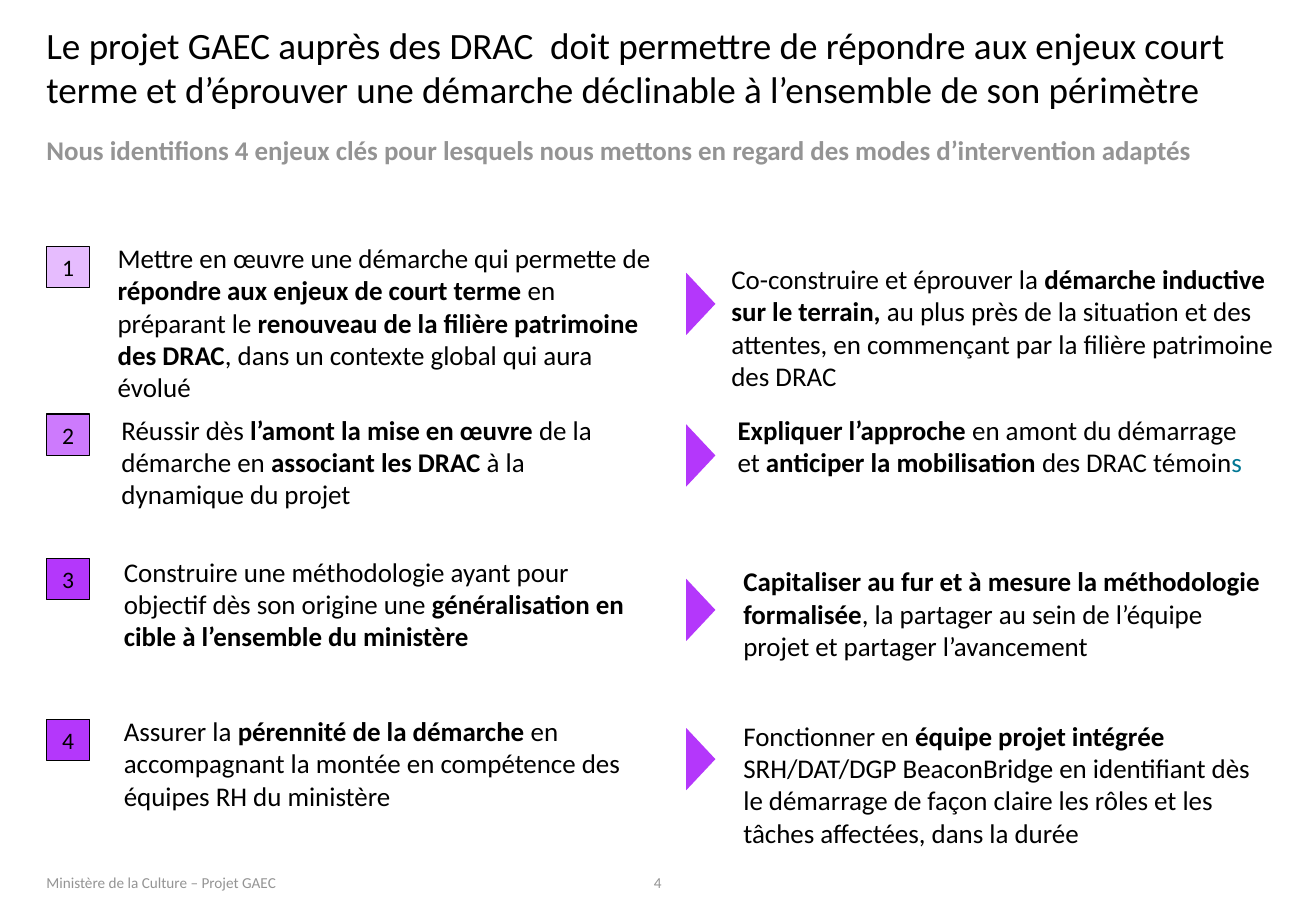
import pptx
import pptx.util
import pptx.dml.color
import pptx.enum.shapes
import pptx.enum.text

Cm = pptx.util.Cm
Pt = pptx.util.Pt
PP_ALIGN = pptx.enum.text.PP_ALIGN
MSO_ANCHOR = pptx.enum.text.MSO_ANCHOR
MSO_SHAPE = pptx.enum.shapes.MSO_SHAPE

COLORS = {
    "text": "000000",
    "muted": "949494",
    "accent": "007794",
    "light": "E6BCFE",
    "medium": "CD7AFD",
    "strong": "B437FB",
}

ROWS = [
    {
        "badge": (5.16, "light"),
        "issue": (2.46, 5.05, 11.46),
        "issue_text": "Mettre en œuvre une démarche qui permette de **répondre aux enjeux "
                      "de court terme **en préparant le **renouveau de la filière patrimoine "
                      "des DRAC**, dans un contexte global qui aura évolué",
        "arrow": 6.05,
        "answer": (15.29, 5.49, 11.43),
        "answer_text": "Co-construire et éprouver la **démarche inductive sur le terrain,** "
                       "au plus près de la situation et des attentes, en commençant par la "
                       "filière patrimoine des DRAC",
    },
    {
        "badge": (8.66, "medium"),
        "issue": (2.54, 8.64, 10.95),
        "issue_text": "Réussir dès **l’amont la mise en œuvre **de la démarche en "
                      "**associant les DRAC **à la dynamique du projet",
        "arrow": 9.22,
        "answer": (15.42, 8.64, 10.92),
        "answer_text": "**Expliquer l’approche **en amont du démarrage et "
                       "**anticiper la mobilisation **des DRAC témoin",
        "answer_end": "s",
    },
    {
        "badge": (11.68, "strong"),
        "issue": (2.59, 11.61, 10.95),
        "issue_text": "Construire une méthodologie ayant pour objectif dès son origine une "
                      "**généralisation en cible à l’ensemble du ministère**",
        "arrow": 12.45,
        "answer": (15.54, 11.81, 10.92),
        "answer_text": "**Capitaliser au fur et à mesure la méthodologie formalisée**, "
                       "la partager au sein de l’équipe projet et partager l’avancement",
    },
    {
        "badge": (15.04, "strong"),
        "issue": (2.59, 14.94, 10.95),
        "issue_text": "Assurer la **pérennité de la démarche **en accompagnant la montée "
                      "en compétence des équipes RH du ministère",
        "arrow": 15.57,
        "answer": (15.54, 15.04, 10.95),
        "answer_text": "Fonctionner en **équipe projet intégrée **SRH/DAT/DGP BeaconBridge "
                       "en identifiant dès le démarrage de façon claire les rôles et les "
                       "tâches affectées, dans la durée",
    },
]


def rgb(name):
    return pptx.dml.color.RGBColor.from_string(COLORS[name])


def add_run(p, text, size, color, bold):
    r = p.add_run()
    r.text = text
    r.font.name = "Calibri"
    r.font.size = Pt(size)
    r.font.bold = bold
    r.font.color.rgb = rgb(color)


def write(sp, text, size=16, color="text", bold=False, align=PP_ALIGN.LEFT,
          anchor=MSO_ANCHOR.TOP, margin=0, end=""):
    tf = sp.text_frame
    tf.word_wrap = True
    tf.auto_size = pptx.enum.text.MSO_AUTO_SIZE.NONE
    tf.vertical_anchor = anchor
    tf.margin_left = tf.margin_right = tf.margin_top = tf.margin_bottom = Cm(margin)
    p = tf.paragraphs[0]
    p.alignment = align
    for i, part in enumerate(text.split("**")):
        if part:
            add_run(p, part, size, color, bold or i % 2 == 1)
    if end:
        add_run(p, end, size, "accent", False)


def add_title(s, text):
    sp = s.shapes.title
    sp.left, sp.top, sp.width, sp.height = Cm(0.97), Cm(0.53), Cm(25.58), Cm(1.8)
    write(sp, text, size=22, anchor=MSO_ANCHOR.BOTTOM)


def add_text(s, x, y, w, h, text, **fmt):
    write(s.shapes.add_textbox(Cm(x), Cm(y), Cm(w), Cm(h)), text, **fmt)


def add_shape(s, kind, x, y, w, h, color):
    sp = s.shapes.add_shape(kind, Cm(x), Cm(y), Cm(w), Cm(h))
    sp.shadow.inherit = False
    sp.fill.solid()
    sp.fill.fore_color.rgb = rgb(color)
    return sp


def add_badge(s, y, color, number):
    sp = add_shape(s, MSO_SHAPE.RECTANGLE, 0.97, y, 0.91, 0.86, color)
    sp.line.color.rgb = rgb("text")
    sp.line.width = Pt(0.75)
    write(sp, str(number), size=14, align=PP_ALIGN.CENTER,
          anchor=MSO_ANCHOR.MIDDLE, margin=0.1)


def add_arrow(s, y):
    sp = add_shape(s, MSO_SHAPE.ISOSCELES_TRIANGLE, 14, y, 1.3, 0.61, "strong")
    sp.rotation = 90
    sp.line.fill.background()


def add_row(s, number, row):
    add_badge(s, *row["badge"], number)
    add_text(s, *row["issue"], 2.1, row["issue_text"])
    add_arrow(s, row["arrow"])
    add_text(s, *row["answer"], 2.1, row["answer_text"], end=row.get("answer_end", ""))


def main():
    prs = pptx.Presentation()
    prs.slide_width, prs.slide_height = Cm(27.51), Cm(19.05)
    s = prs.slides.add_slide(prs.slide_layouts[5])
    add_title(s, "Le projet GAEC auprès des DRAC  doit permettre de répondre aux enjeux court "
                 "terme et d’éprouver une démarche déclinable à l’ensemble de son périmètre")
    add_text(s, 0.97, 2.79, 25.58, 0.94,
             "Nous identifions 4 enjeux clés pour lesquels nous mettons en regard "
             "des modes d’intervention adaptés", color="muted", bold=True)
    for number, row in enumerate(ROWS, 1):
        add_row(s, number, row)
    footer = {"size": 9, "color": "muted", "anchor": MSO_ANCHOR.BOTTOM}
    add_text(s, 0.97, 18.01, 6.3, 0.64, "Ministère de la Culture – Projet GAEC", **footer)
    add_text(s, 13.13, 18.06, 1.24, 0.58, "4", align=PP_ALIGN.CENTER, **footer)
    prs.save("out.pptx")


if __name__ == "__main__":
    main()
